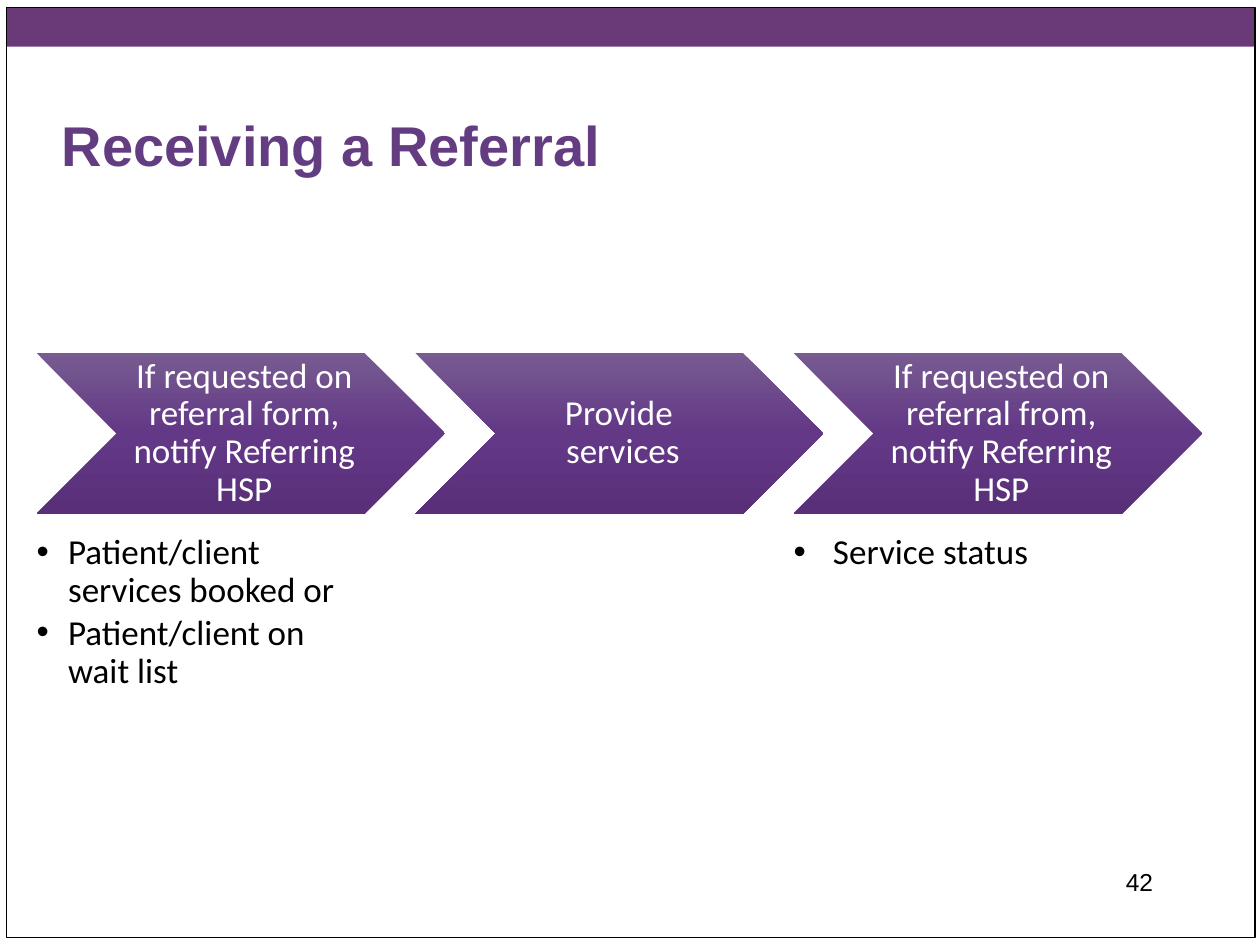
from copy import deepcopy
from dataclasses import dataclass

from lxml.etree import SubElement
from pptx import Presentation
from pptx.dml.color import RGBColor
from pptx.enum.shapes import MSO_SHAPE
from pptx.enum.text import MSO_ANCHOR, MSO_AUTO_SIZE, PP_ALIGN
from pptx.oxml.ns import qn
from pptx.util import Pt

WHITE, BLACK = "FFFFFF", "000000"
BAR, TITLE = "693A77", "633C82"
GRADIENT = [(0, "775B91"), (0.5, "633886"), (1, "592F7A")]
STEP_LEFT, STEP_PITCH = 20.9, 216.3


@dataclass
class Step:
    label: str
    details: tuple[str, ...] = ()


STEPS = [
    Step("If requested on referral form, notify Referring HSP",
         ("Patient/client services booked or", "Patient/client on wait list")),
    Step("Provide  services"),
    Step("If requested on referral from, notify Referring HSP",
         (" Service status",)),
]


def rgb(color: str) -> RGBColor:
    return RGBColor.from_string(color)


def place(s, left: float, top: float, width: float, height: float) -> None:
    s.left, s.top, s.width, s.height = Pt(left), Pt(top), Pt(width), Pt(height)


def write(s, *lines: str, font="Calibri", size=20, color=BLACK, bold=False,
          align=PP_ALIGN.LEFT, anchor=MSO_ANCHOR.TOP, spacing=1.0, after=0,
          insets=(7.2, 3.6, 7.2, 3.6), bullet=False) -> None:
    """Fill a shape with one paragraph per line."""
    tf = s.text_frame
    tf.auto_size, tf.word_wrap = MSO_AUTO_SIZE.NONE, True
    tf.vertical_anchor = anchor
    (tf.margin_left, tf.margin_top,
     tf.margin_right, tf.margin_bottom) = map(Pt, insets)
    for i, line in enumerate(lines):
        p = tf.add_paragraph() if i else tf.paragraphs[0]
        p.alignment, p.line_spacing = align, spacing
        p.space_before, p.space_after = Pt(0), Pt(after)
        if bullet:
            pPr = p._p.get_or_add_pPr()
            pPr.set("marL", str(Pt(18)))
            pPr.set("indent", str(-Pt(18)))
            SubElement(pPr, qn("a:buFont"), typeface="Arial")
            SubElement(pPr, qn("a:buChar"), char="•")
        r = p.add_run()
        r.text = line
        r.font.name, r.font.size, r.font.bold = font, Pt(size), bold
        r.font.color.rgb = rgb(color)


def add_rect(shapes, left: float, top: float, width: float, height: float,
             fill: str = "", line: str = "") -> None:
    s = shapes.add_shape(MSO_SHAPE.RECTANGLE, Pt(left), Pt(top), Pt(width), Pt(height))
    s.shadow.inherit = False
    if fill:
        s.fill.solid()
        s.fill.fore_color.rgb = rgb(fill)
    else:
        s.fill.background()
    if line:
        s.line.color.rgb = rgb(line)
        s.line.width = Pt(0.75)
    else:
        s.line.fill.background()


def add_step(shapes, left: float, label: str) -> None:
    s = shapes.add_shape(MSO_SHAPE.CHEVRON, Pt(left), Pt(201.6), Pt(233.3), Pt(92.2))
    s.shadow.inherit = False
    s.line.fill.background()
    s.fill.gradient()
    s.fill.gradient_angle = 270
    # The default gradient has two stops; add the middle one
    stops = s._element.spPr.find(qn("a:gradFill")).find(qn("a:gsLst"))
    stops.append(deepcopy(stops[0]))
    for stop, (position, color) in zip(s.fill.gradient_stops, GRADIENT):
        stop.position, stop.color.rgb = position, rgb(color)
    write(s, label, color=WHITE, align=PP_ALIGN.CENTER, anchor=MSO_ANCHOR.MIDDLE,
          spacing=0.9, after=7, insets=(6.3, 2.1, 2.1, 2.1))


def main() -> None:
    prs = Presentation()
    prs.slide_width, prs.slide_height = Pt(720), Pt(540)
    slide = prs.slides.add_slide(prs.slide_layouts[3])
    shapes = slide.shapes
    title, *bodies = slide.placeholders

    # Top bar and frame
    add_rect(shapes, 3.6, 4.3, 713.5, 22.3, fill=BAR)
    add_rect(shapes, 3.6, 4.3, 713.5, 531.4, line=BLACK)

    # Title
    place(title, 28, 33.1, 612, 72)
    write(title, "Receiving a Referral", font="Arial", size=32, color=TITLE,
          bold=True, anchor=MSO_ANCHOR.BOTTOM)

    # Process steps with their details below
    free_bodies = iter(bodies)
    for i, step in enumerate(STEPS):
        left = STEP_LEFT + i * STEP_PITCH
        add_step(shapes, left, step.label)
        if step.details:
            body = next(free_bodies)
            place(body, left, 305.3, 186.5, 92.2)
            write(body, *step.details, spacing=0.9, after=3,
                  insets=(0, 0, 0, 0), bullet=True)

    # Page number
    number = shapes.add_textbox(Pt(516.2), Pt(491.8), Pt(149.8), Pt(36))
    write(number, "42", font="Arial", size=14, align=PP_ALIGN.RIGHT)

    prs.save("out.pptx")


if __name__ == "__main__":
    main()
